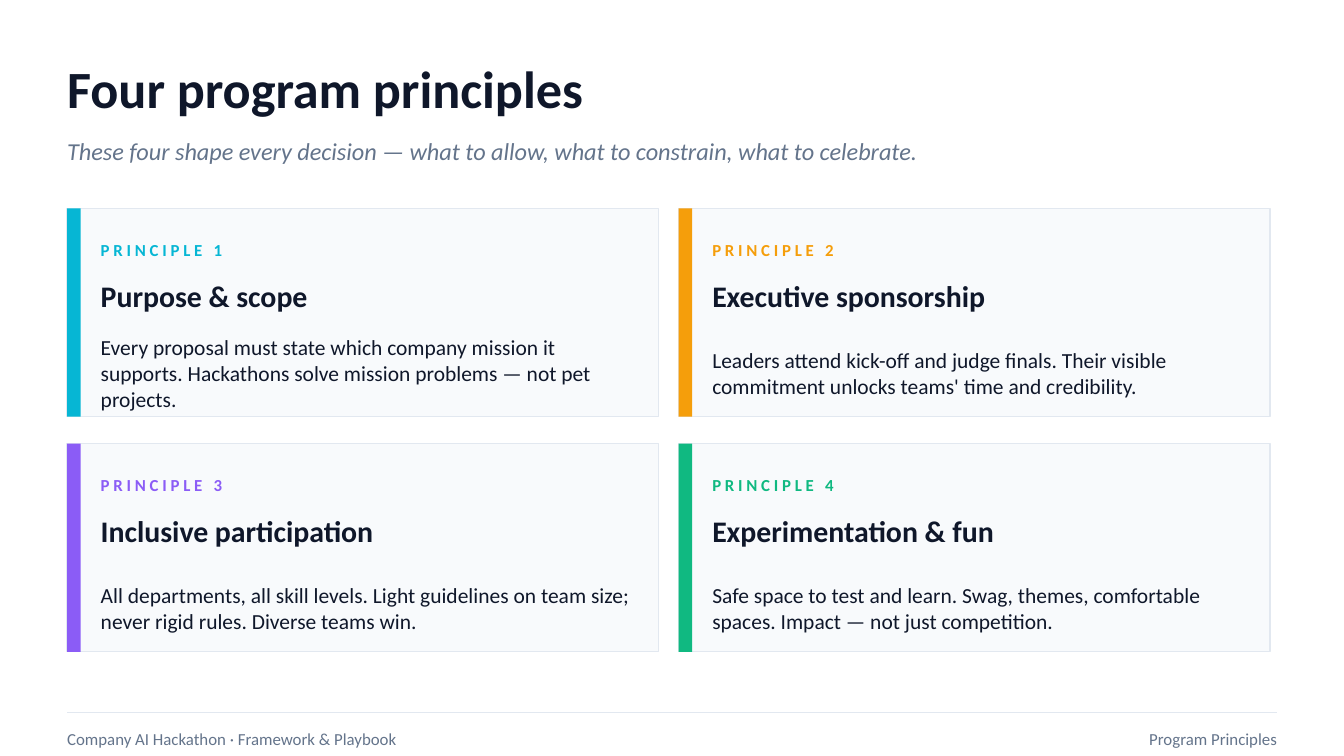
from pptx import Presentation
from pptx.dml.color import RGBColor
from pptx.enum.shapes import MSO_CONNECTOR, MSO_SHAPE
from pptx.enum.text import MSO_ANCHOR, PP_ALIGN
from pptx.oxml.ns import qn
from pptx.util import Inches, Pt
from lxml.etree import SubElement

# Content
TITLE = "Four program principles"
SUBTITLE = "These four shape every decision — what to allow, what to constrain, what to celebrate."
PRINCIPLES = [
    ("Purpose & scope", "06B6D4",
     "Every proposal must state which company mission it supports. "
     "Hackathons solve mission problems — not pet projects."),
    ("Executive sponsorship", "F59E0B",
     "Leaders attend kick-off and judge finals. "
     "Their visible commitment unlocks teams' time and credibility."),
    ("Inclusive participation", "8B5CF6",
     "All departments, all skill levels. "
     "Light guidelines on team size; never rigid rules. Diverse teams win."),
    ("Experimentation & fun", "10B981",
     "Safe space to test and learn. "
     "Swag, themes, comfortable spaces. Impact — not just competition."),
]
FOOTER_LEFT = "Company AI Hackathon · Framework & Playbook"
FOOTER_RIGHT = "Program Principles"

# Style and grid, in inches
FONT = "Calibri"
INK, MUTED, RULE, PANEL = "0F172A", "64748B", "E2E8F0", "F8FAFC"
WIDTH, MARGIN = 10, 0.5
HEIGHT = WIDTH * 9 / 16
CONTENT_WIDTH = WIDTH - 2 * MARGIN
COLUMNS = 2
CARD_WIDTH, CARD_HEIGHT, CARDS_TOP = 4.4, 1.55, 1.55
COLUMN_GAP, ROW_GAP = 0.15, 0.2
ACCENT_WIDTH, CARD_INDENT = 0.1, 0.25
FOOTER_TOP = 5.35


def color(hex_code):
    return RGBColor.from_string(hex_code)


def add_text(slide, text, left, top, width, height, size, ink=INK,
             bold=False, italic=False, align=PP_ALIGN.LEFT, spacing=0):
    frame = slide.shapes.add_textbox(
        Inches(left), Inches(top), Inches(width), Inches(height)).text_frame
    frame.word_wrap = True
    frame.vertical_anchor = MSO_ANCHOR.MIDDLE
    frame.margin_left = frame.margin_right = frame.margin_top = frame.margin_bottom = 0
    paragraph = frame.paragraphs[0]
    paragraph.alignment = align
    run = paragraph.add_run()
    run.text = text
    font = run.font
    font.name, font.size, font.bold, font.italic = FONT, Pt(size), bold, italic
    font.color.rgb = color(ink)
    if spacing:
        run._r.get_or_add_rPr().set("spc", str(spacing * 100))


def add_box(slide, left, top, width, height, fill, outline=None):
    box = slide.shapes.add_shape(
        MSO_SHAPE.RECTANGLE, Inches(left), Inches(top), Inches(width), Inches(height))
    box.shadow.inherit = False
    box.fill.solid()
    box.fill.fore_color.rgb = color(fill)
    if outline:
        box.line.color.rgb = color(outline)
        box.line.width = Pt(0.75)
    else:
        box.line.fill.background()


def add_card(slide, index, heading, accent, body):
    row, column = divmod(index, COLUMNS)
    left = MARGIN + column * (CARD_WIDTH + COLUMN_GAP)
    top = CARDS_TOP + row * (CARD_HEIGHT + ROW_GAP)
    text_left = left + CARD_INDENT
    add_box(slide, left, top, CARD_WIDTH, CARD_HEIGHT, PANEL, RULE)
    add_box(slide, left, top, ACCENT_WIDTH, CARD_HEIGHT, accent)
    add_text(slide, f"PRINCIPLE {index + 1}", text_left, top + 0.18, 3, 0.25,
             9, accent, bold=True, spacing=2)
    add_text(slide, heading, text_left, top + 0.45, 4, 0.4, 16, bold=True)
    add_text(slide, body, text_left, top + 0.9, 4, 0.65, 11.5)


def add_footer(slide):
    rule = slide.shapes.add_connector(
        MSO_CONNECTOR.STRAIGHT, Inches(MARGIN), Inches(FOOTER_TOP - 0.05),
        Inches(WIDTH - MARGIN), Inches(FOOTER_TOP - 0.05))
    rule.line.color.rgb = color(RULE)
    rule.line.width = Pt(0.75)
    SubElement(rule._element.spPr, qn("a:effectLst"))
    add_text(slide, FOOTER_LEFT, MARGIN, FOOTER_TOP, 5.5, 0.3, 9, MUTED)
    add_text(slide, FOOTER_RIGHT, 6, FOOTER_TOP, 3.5, 0.3, 9, MUTED, align=PP_ALIGN.RIGHT)


def main():
    deck = Presentation()
    deck.slide_width, deck.slide_height = Inches(WIDTH), Inches(HEIGHT)
    slide = deck.slides.add_slide(deck.slide_layouts[6])
    slide.background.fill.solid()
    slide.background.fill.fore_color.rgb = color("FFFFFF")

    # Heading
    add_text(slide, TITLE, MARGIN, 0.35, CONTENT_WIDTH, 0.6, 28, bold=True)
    add_text(slide, SUBTITLE, MARGIN, 0.95, CONTENT_WIDTH, 0.35, 13, MUTED, italic=True)

    # Principle cards
    for index, principle in enumerate(PRINCIPLES):
        add_card(slide, index, *principle)

    add_footer(slide)
    deck.save("out.pptx")


if __name__ == "__main__":
    main()
